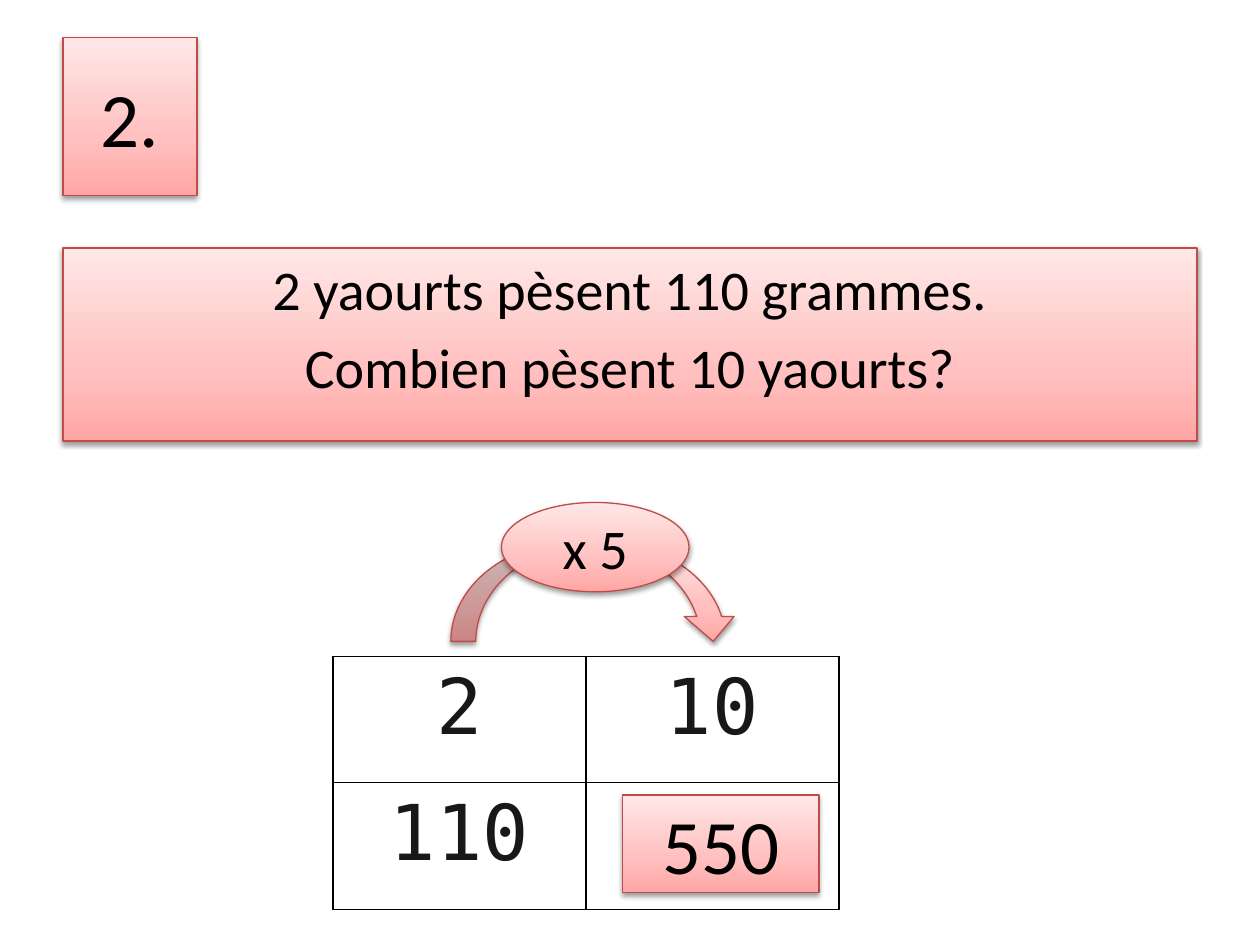
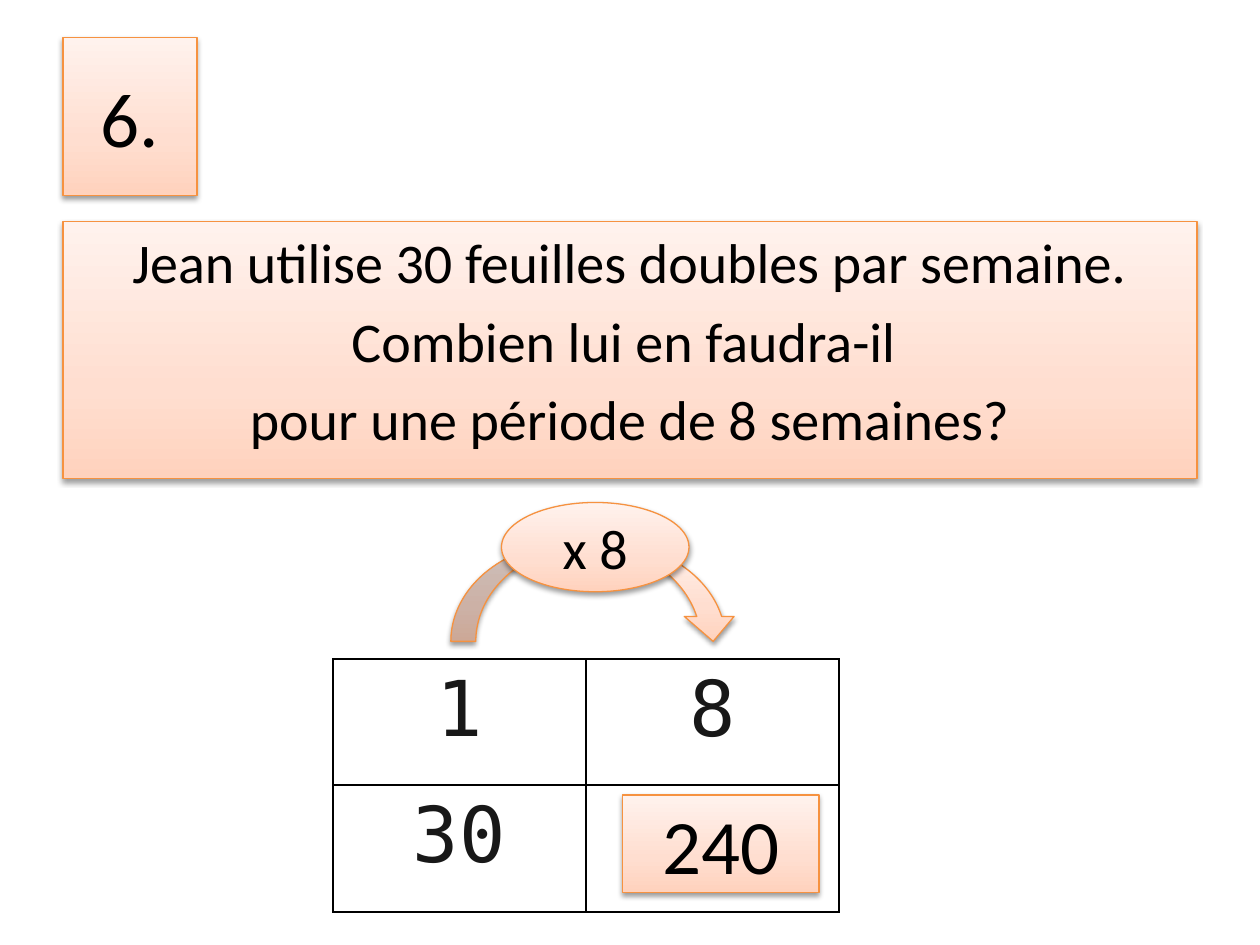
from dataclasses import dataclass

from lxml.etree import SubElement
from pptx import Presentation
from pptx.dml.color import RGBColor
from pptx.enum.shapes import MSO_SHAPE
from pptx.enum.text import MSO_ANCHOR, PP_ALIGN
from pptx.oxml.ns import qn
from pptx.util import Cm, Pt

TITLE_ONLY = 5
TEXT_FONT = "Calibri"
TABLE_FONT = "DejaVu Sans Mono"
BLACK = "000000"
WHITE = "FFFFFF"
DIGIT_GREY = "181818"
LARGE, MEDIUM = 44, 32
MARGIN = 1.27
COLUMN_WIDTH = 5.1
ROW_HEIGHTS = (2.54, 2.56)


@dataclass
class Theme:
    stops: tuple
    outline: str


@dataclass
class Problem:
    number: str
    theme: Theme
    statement: tuple
    statement_top: float
    statement_height: float
    table_top: float
    rows: tuple
    factor: str
    answer: str


RED = Theme(((0, "FFA6A5"), (35, "FFC0BF"), (100, "FFE7E7")), "BF4C48")
ORANGE = Theme(((0, "FFD2BD"), (35, "FFDED0"), (100, "FFF2ED")), "F69240")

PROBLEMS = (
    Problem(
        "2.", RED,
        ("2 yaourts pèsent 110 grammes.", "Combien pèsent 10 yaourts?"),
        5.0, 3.89, 13.23,
        (("2", "10"), ("110", "")), "x 5", "550",
    ),
    Problem(
        "6.", ORANGE,
        (
            "Jean utilise 30 feuilles doubles par semaine.",
            "Combien lui en faudra-il ",
            "pour une période de 8 semaines?",
        ),
        4.47, 5.18, 13.28,
        (("1", "8"), ("30", "")), "x 8", "240",
    ),
)


def color(hex_string):
    return RGBColor.from_string(hex_string)


def add_color_xml(parent, hex_string):
    return SubElement(parent, qn("a:srgbClr"), val=hex_string)


def style_shape(shape, theme):
    shape.fill.gradient()
    shape.fill.gradient_angle = 90
    properties = shape._element.spPr
    stop_list = properties.find(".//" + qn("a:gsLst"))
    for stop in list(stop_list):
        stop_list.remove(stop)
    for position, hex_string in theme.stops:
        stop = SubElement(stop_list, qn("a:gs"), pos=str(position * 1000))
        add_color_xml(stop, hex_string)
    shape.line.color.rgb = color(theme.outline)
    shape.line.width = Pt(0.75)
    shape.shadow.inherit = False
    shadow = SubElement(
        properties.find(qn("a:effectLst")), qn("a:outerShdw"),
        blurRad=str(Pt(3.1)), dist=str(Pt(1.6)), dir="5400000", rotWithShape="0",
    )
    SubElement(add_color_xml(shadow, BLACK), qn("a:alpha"), val="38000")


def write_paragraph(paragraph, text, size, font_name=TEXT_FONT, hex_string=BLACK):
    paragraph.alignment = PP_ALIGN.CENTER
    run = paragraph.add_run()
    run.text = text
    run.font.name = font_name
    run.font.size = Pt(size)
    run.font.color.rgb = color(hex_string)


def write_lines(shape, lines, size, anchor=MSO_ANCHOR.MIDDLE, space_before=0):
    frame = shape.text_frame
    frame.word_wrap = True
    frame.vertical_anchor = anchor
    for index, line in enumerate(lines):
        paragraph = frame.add_paragraph() if index else frame.paragraphs[0]
        paragraph.space_before = Pt(space_before)
        write_paragraph(paragraph, line, size)


def add_themed_shape(shapes, kind, left, top, width, height, theme):
    shape = shapes.add_shape(kind, Cm(left), Cm(top), Cm(width), Cm(height))
    style_shape(shape, theme)
    return shape


def format_number_title(title, problem):
    title.left, title.top = Cm(MARGIN), Cm(0.76)
    title.width, title.height = Cm(2.7), Cm(3.18)
    style_shape(title, problem.theme)
    write_lines(title, (problem.number,), LARGE)


def add_statement(slide, problem):
    box = add_themed_shape(
        slide.shapes, MSO_SHAPE.RECTANGLE, MARGIN, problem.statement_top,
        22.86, problem.statement_height, problem.theme,
    )
    write_lines(box, problem.statement, MEDIUM, MSO_ANCHOR.TOP, 0.2 * MEDIUM)


def add_cell_borders(cell):
    properties = cell._tc.get_or_add_tcPr()
    for side in ("L", "R", "T", "B"):
        border = SubElement(properties, qn("a:ln" + side), w=str(Pt(1)))
        add_color_xml(SubElement(border, qn("a:solidFill")), BLACK)


def add_proportion_table(slide, problem):
    table = slide.shapes.add_table(
        2, 2, Cm(6.71), Cm(problem.table_top),
        Cm(2 * COLUMN_WIDTH), Cm(sum(ROW_HEIGHTS)),
    ).table
    table.first_row = False
    table.horz_banding = False
    for row, height in zip(table.rows, ROW_HEIGHTS):
        row.height = Cm(height)
    for row_index, values in enumerate(problem.rows):
        for column_index, value in enumerate(values):
            cell = table.cell(row_index, column_index)
            add_cell_borders(cell)
            cell.fill.solid()
            cell.fill.fore_color.rgb = color(WHITE)
            if value:
                paragraph = cell.text_frame.paragraphs[0]
                write_paragraph(paragraph, value, LARGE, TABLE_FONT, DIGIT_GREY)


def add_factor_arrow(slide, problem):
    group = slide.shapes.add_group_shape()
    add_themed_shape(
        group.shapes, MSO_SHAPE.CURVED_DOWN_ARROW, 9.09, 10.92, 5.79, 2.01, problem.theme
    )
    bubble = add_themed_shape(
        group.shapes, MSO_SHAPE.OVAL, 10.11, 10.13, 3.78, 1.8, problem.theme
    )
    write_lines(bubble, (problem.factor,), MEDIUM)


def add_answer(slide, problem):
    box = add_themed_shape(
        slide.shapes, MSO_SHAPE.RECTANGLE, 12.55, 16.03, 3.96, 1.96, problem.theme
    )
    write_lines(box, (problem.answer,), LARGE)


def add_problem_slide(presentation, problem):
    slide = presentation.slides.add_slide(presentation.slide_layouts[TITLE_ONLY])
    format_number_title(slide.shapes.title, problem)
    add_statement(slide, problem)
    add_proportion_table(slide, problem)
    add_factor_arrow(slide, problem)
    add_answer(slide, problem)


def main():
    presentation = Presentation()
    presentation.slide_width = Cm(25.4)
    presentation.slide_height = Cm(19.05)
    for problem in PROBLEMS:
        add_problem_slide(presentation, problem)
    presentation.save("out.pptx")


if __name__ == "__main__":
    main()
